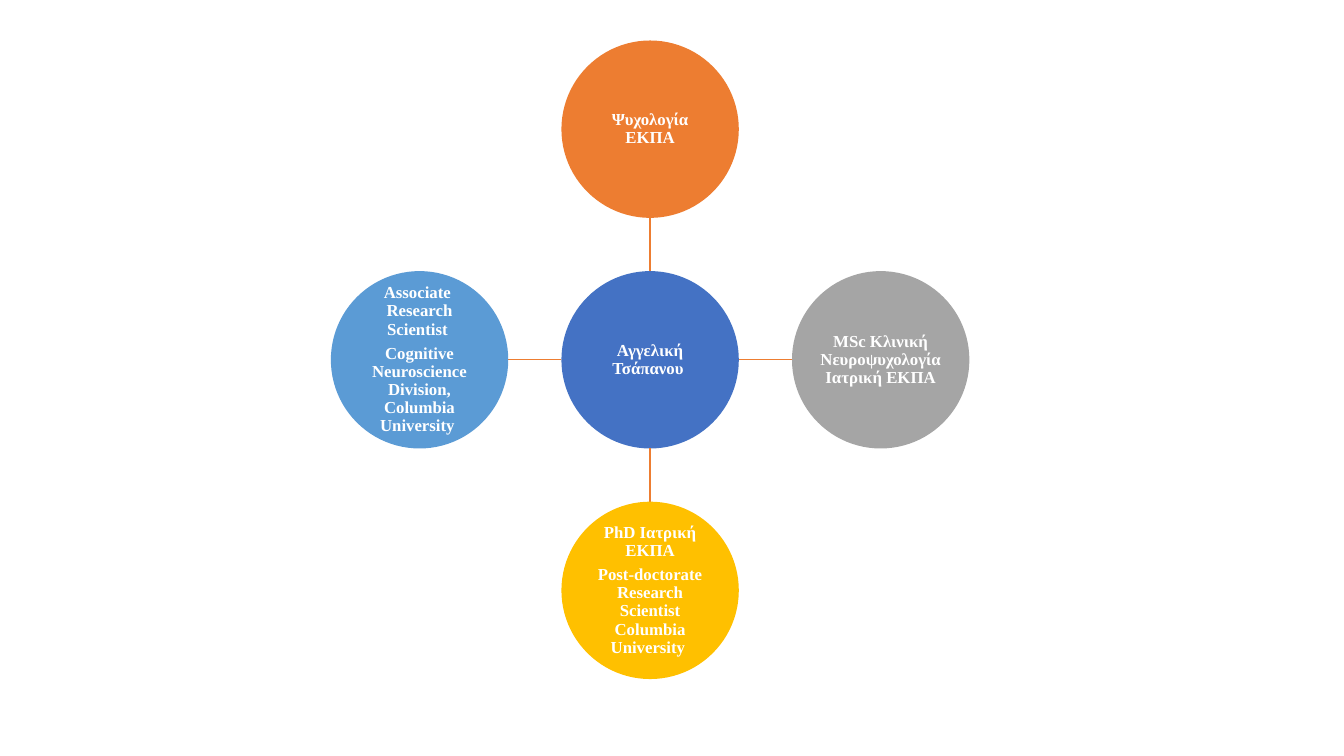
import pptx
import pptx.dml.color
import pptx.enum.shapes
import pptx.enum.text
import pptx.oxml.ns
import pptx.util
import lxml.etree

Pt = pptx.util.Pt

CENTER_X, CENTER_Y = 464.4, 257
DIAMETER = 126.7
STEP = 164.7

CORE = ("4472C4", ["Αγγελική Τσάπανου "])
SATELLITES = [
    (0, -1, "ED7D31", ["Ψυχολογία ΕΚΠΑ"]),
    (1, 0, "A5A5A5", ["MSc Κλινική Νευροψυχολογία\nΙατρική ΕΚΠΑ"]),
    (0, 1, "FFC000", ["PhD Ιατρική ΕΚΠΑ",
                      "Post-doctorate Research Scientist Columbia University "]),
    (-1, 0, "5B9BD5", ["Associate \nResearch Scientist ",
                       "Cognitive Neuroscience Division, Columbia University "]),
]


def color(value):
    return pptx.dml.color.RGBColor.from_string(value)


class RadialDiagram:
    font_name = "Times New Roman"
    font_size = 12
    text_color = "FFFFFF"
    line_color = "ED7D31"
    margin = 0.72

    def __init__(self, slide):
        self.slide = slide

    def spoke(self, dx, dy):
        start, end = DIAMETER / 2, STEP - DIAMETER / 2
        connector = self.slide.shapes.add_connector(
            pptx.enum.shapes.MSO_CONNECTOR.STRAIGHT,
            Pt(CENTER_X + dx * start), Pt(CENTER_Y + dy * start),
            Pt(CENTER_X + dx * end), Pt(CENTER_Y + dy * end))
        connector.line.color.rgb = color(self.line_color)
        connector.line.width = Pt(1)
        lxml.etree.SubElement(connector._element.spPr, pptx.oxml.ns.qn("a:effectLst"))

    def circle(self, dx, dy, fill, paragraphs):
        shape = self.slide.shapes.add_shape(
            pptx.enum.shapes.MSO_SHAPE.OVAL,
            Pt(CENTER_X + dx * STEP - DIAMETER / 2),
            Pt(CENTER_Y + dy * STEP - DIAMETER / 2),
            Pt(DIAMETER), Pt(DIAMETER))
        shape.shadow.inherit = False
        shape.fill.solid()
        shape.fill.fore_color.rgb = color(fill)
        shape.line.fill.background()
        frame = shape.text_frame
        frame.word_wrap = True
        frame.vertical_anchor = pptx.enum.text.MSO_ANCHOR.MIDDLE
        frame.margin_left = frame.margin_right = Pt(self.margin)
        frame.margin_top = frame.margin_bottom = Pt(self.margin)
        for index, text in enumerate(paragraphs):
            paragraph = frame.add_paragraph() if index else frame.paragraphs[0]
            self.label(paragraph, text)

    def label(self, paragraph, text):
        paragraph.alignment = pptx.enum.text.PP_ALIGN.CENTER
        paragraph.line_spacing = 0.9
        paragraph.space_after = Pt(4.2)
        for index, line in enumerate(text.split("\n")):
            if index:
                paragraph.add_line_break()
            run = paragraph.add_run()
            run.text = line
            run.font.name = self.font_name
            run.font.size = Pt(self.font_size)
            run.font.bold = True
            run.font.color.rgb = color(self.text_color)


def main():
    presentation = pptx.Presentation()
    presentation.slide_width = Pt(960)
    presentation.slide_height = Pt(540)
    slide = presentation.slides.add_slide(presentation.slide_layouts[6])
    diagram = RadialDiagram(slide)
    diagram.circle(0, 0, *CORE)
    for dx, dy, fill, paragraphs in SATELLITES:
        diagram.spoke(dx, dy)
        diagram.circle(dx, dy, fill, paragraphs)
    presentation.save("out.pptx")


if __name__ == "__main__":
    main()
